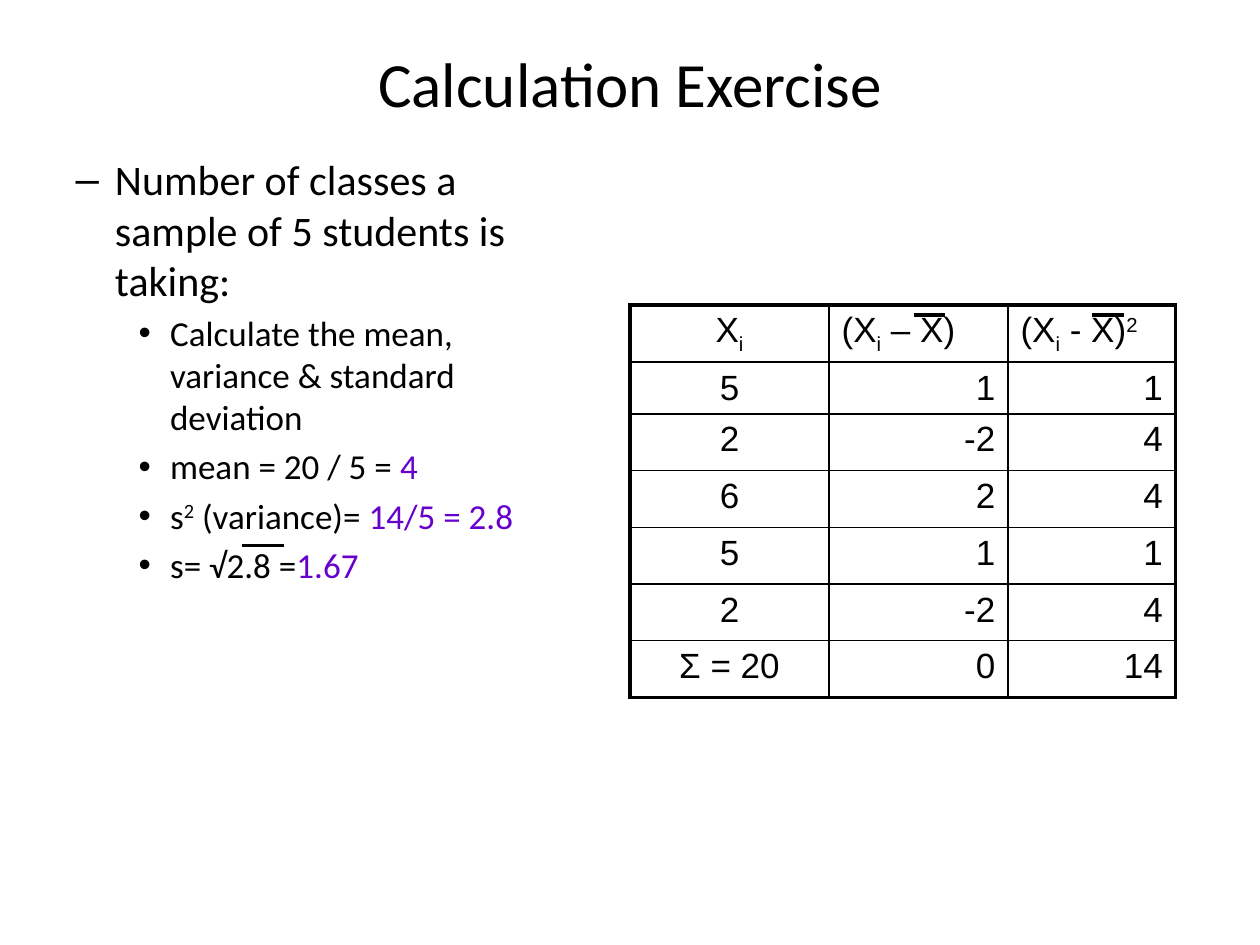
from lxml.etree import SubElement
from pptx import Presentation
from pptx.dml.color import RGBColor
from pptx.enum.shapes import MSO_CONNECTOR as Connector
from pptx.enum.text import MSO_ANCHOR as Anchor, MSO_AUTO_SIZE as AutoSize, PP_ALIGN as Align
from pptx.oxml.ns import qn
from pptx.util import Inches, Pt

THEME = {
    "ink": RGBColor(0, 0, 0), "answer": RGBColor(0x66, 0x00, 0xCC),
    "body_font": "Calibri", "table_font": "Arial",
    "title": 36, "lead": 24, "detail": 20, "table": 20,
    "frame": 2.25, "grid": 1, "root_bar": 1.5,
}
BASELINES = {"sub": "-25000", "super": "30000"}

TITLE = "Calculation Exercise"
STEPS = [
    (1, "lead", [("Number of classes a sample of 5 students is taking:", "")]),
    (2, "detail", [("Calculate the mean, variance & standard deviation", "")]),
    (2, "detail", [("mean = 20 / 5 = ", ""), ("4", "answer")]),
    (2, "detail", [("s", ""), ("2", "super"), (" (variance)= ", ""), ("14/5 = 2.8", "answer")]),
    (2, "detail", [("s= √2.8 =", ""), ("1.67", "answer")]),
]
HEADERS = [
    (Align.CENTER, [("X", ""), ("i", "sub")]),
    (Align.LEFT, [("(X", ""), ("i", "sub"), (" – X)", "")]),
    (Align.LEFT, [("(X", ""), ("i", "sub"), (" - X)", ""), ("2", "super")]),
]
VALUES = [
    ("5", "1", "1"),
    ("2", "-2", "4"),
    ("6", "2", "4"),
    ("5", "1", "1"),
    ("2", "-2", "4"),
    ("Σ = 20", "0", "14"),
]
VALUE_ALIGNS = (Align.CENTER, Align.RIGHT, Align.RIGHT)
COLUMN_WIDTHS = (1.58, 1.42, 1.33)
ROW_HEIGHTS = (0.45, 0.4) + (0.45,) * 5
OVERBARS = [
    (7.25, 2.5, 0.25, "frame"),
    (8.67, 2.5, 0.25, "frame"),
    (1.92, 4.33, 0.33, "root_bar"),
]


def place(shape, left, top, width, height):
    shape.left, shape.top = Inches(left), Inches(top)
    shape.width, shape.height = Inches(width), Inches(height)


def write(paragraph, pieces, size, font):
    paragraph.font.size = Pt(THEME[size])
    paragraph.font.name = THEME[font]
    paragraph.font.color.rgb = THEME["ink"]
    for words, role in pieces:
        run = paragraph.add_run()
        run.text = words
        if role == "answer":
            run.font.color.rgb = THEME["answer"]
        elif role in BASELINES:
            run._r.get_or_add_rPr().set("baseline", BASELINES[role])


def rule_cell(cell, on_frame):
    properties = cell._tc.get_or_add_tcPr()
    for side in ("L", "R", "T", "B"):
        weight = THEME["frame" if on_frame[side] else "grid"]
        edge = SubElement(properties, qn(f"a:ln{side}"), w=str(Pt(weight)))
        paint = SubElement(edge, qn("a:solidFill"))
        SubElement(paint, qn("a:srgbClr"), val=str(THEME["ink"]))
    cell.fill.background()


def add_scores(slide):
    rows = [HEADERS] + [
        [(align, [(value, "")]) for align, value in zip(VALUE_ALIGNS, values)]
        for values in VALUES
    ]
    last_row, last_column = len(rows) - 1, len(HEADERS) - 1
    scores = slide.shapes.add_table(
        len(rows), len(HEADERS), Inches(5), Inches(2.42),
        Inches(sum(COLUMN_WIDTHS)), Inches(sum(ROW_HEIGHTS))).table
    scores.first_row = scores.horz_banding = False
    for column, width in zip(scores.columns, COLUMN_WIDTHS):
        column.width = Inches(width)
    for row, height in zip(scores.rows, ROW_HEIGHTS):
        row.height = Inches(height)
    for r, row in enumerate(rows):
        for c, (align, pieces) in enumerate(row):
            cell = scores.cell(r, c)
            rule_cell(cell, {"L": c == 0, "R": c == last_column, "T": r == 0, "B": r == last_row})
            paragraph = cell.text_frame.paragraphs[0]
            paragraph.alignment = align
            write(paragraph, pieces, "table", "table_font")


def add_overbar(slide, left, top, length, weight):
    bar = slide.shapes.add_connector(
        Connector.STRAIGHT, Inches(left), Inches(top), Inches(left + length), Inches(top))
    bar.line.color.rgb = THEME["ink"]
    bar.line.width = Pt(THEME[weight])
    SubElement(bar._element.spPr, qn("a:effectLst"))


def main():
    deck = Presentation()
    deck.slide_width, deck.slide_height = Inches(10), Inches(7.5)
    slide = deck.slides.add_slide(deck.slide_layouts[1])

    heading = slide.shapes.title
    place(heading, 0.5, 0.3, 9, 0.7)
    heading.text_frame.vertical_anchor = Anchor.MIDDLE
    heading.text_frame.auto_size = AutoSize.NONE
    heading_line = heading.text_frame.paragraphs[0]
    heading_line.alignment = Align.CENTER
    write(heading_line, [(TITLE, "")], "title", "body_font")

    steps = slide.placeholders[1]
    place(steps, 0, 1.17, 4.67, 5.67)
    steps.text_frame.auto_size = AutoSize.NONE
    for number, (level, size, pieces) in enumerate(STEPS):
        step = steps.text_frame.add_paragraph() if number else steps.text_frame.paragraphs[0]
        step.level = level
        write(step, pieces, size, "body_font")

    add_scores(slide)
    for overbar in OVERBARS:
        add_overbar(slide, *overbar)
    deck.save("out.pptx")


if __name__ == "__main__":
    main()
